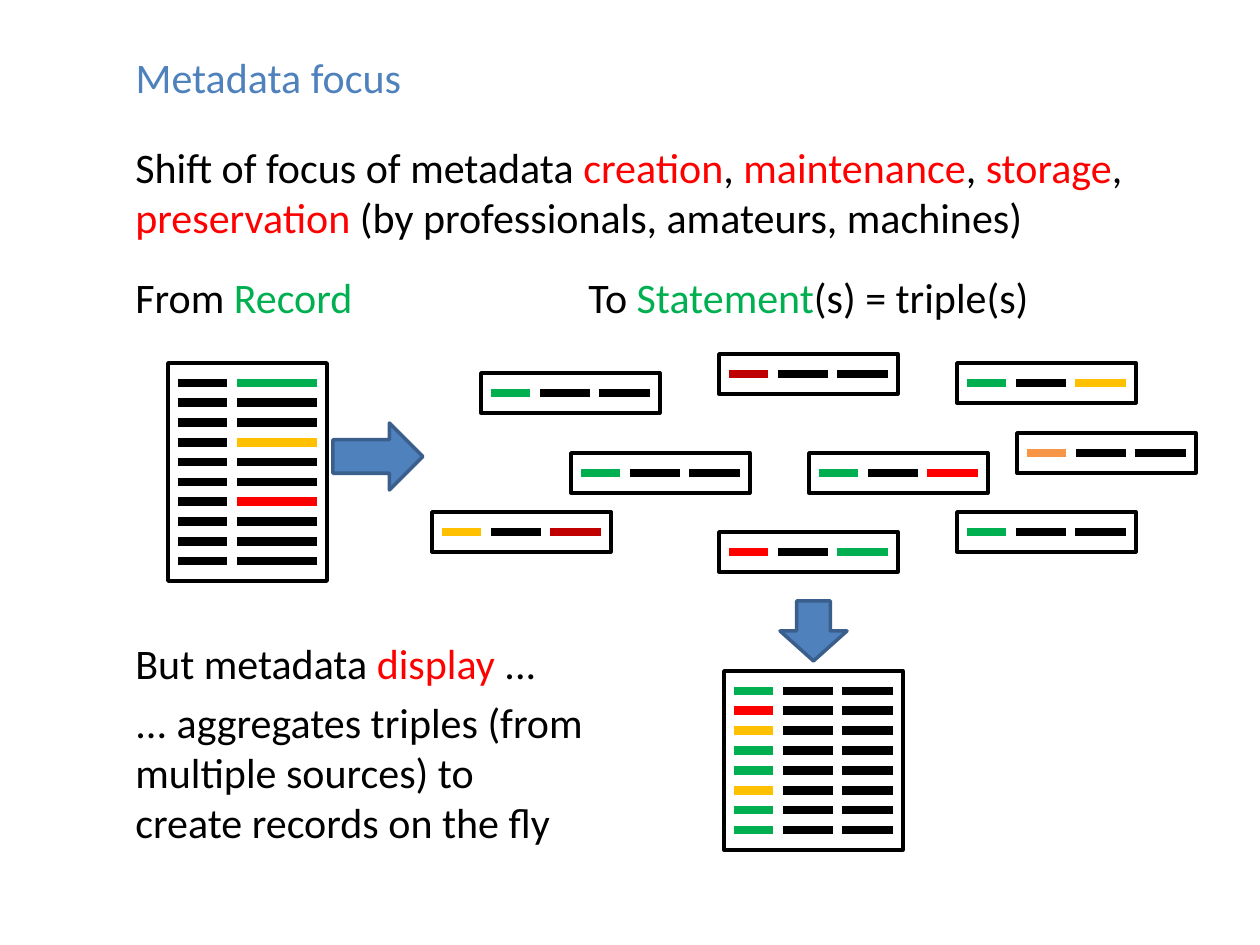
from pptx import Presentation
from pptx import util as u
from pptx.dml.color import RGBColor
from pptx.enum import shapes, text
from pptx.oxml.xmlchemy import OxmlElement

SCALE = 914400 / 126
BLACK = RGBColor(0x00, 0x00, 0x00)
BLUE = RGBColor(0x4F, 0x81, 0xBD)
NAVY = RGBColor(0x3A, 0x5F, 0x8C)
RED = RGBColor(0xFF, 0x00, 0x00)
GREEN = RGBColor(0x00, 0xB0, 0x50)
GOLD = RGBColor(0xFF, 0xC0, 0x00)
MAROON = RGBColor(0xC0, 0x00, 0x00)
ORANGE = RGBColor(0xF7, 0x96, 0x46)

ROW_MARGIN = 20
RECORD_COLUMNS = [(10, 59), (69, 149)]
TRIPLE_COLUMNS = [(10, 49), (59, 109), (118, 169)]

PASSAGES = [
    ((123, 135, 1022, 115), [
        ("Shift of focus of metadata ", BLACK), ("creation", RED),
        (", ", BLACK), ("maintenance", RED), (", ", BLACK),
        ("storage", RED), (", ", BLACK), ("preservation ", RED),
        ("(by professionals, amateurs, machines)", BLACK)]),
    ((123, 265, 248, 63), [("From ", BLACK), ("Record", GREEN)]),
    ((576, 265, 476, 63), [
        ("To ", BLACK), ("Statement", GREEN), ("(s) = triple(s)", BLACK)]),
    ((123, 631, 436, 63), [
        ("But metadata ", BLACK), ("display", RED), (" ...", BLACK)]),
    ((123, 690, 477, 165), [
        ("... aggregates triples (from multiple sources) to "
         "create records on the fly", BLACK)]),
]

STATEMENTS = [
    (481, 373, GREEN, BLACK),
    (809, 453, GREEN, RED),
    (719, 354, MAROON, BLACK),
    (957, 363, GREEN, GOLD),
    (571, 453, GREEN, BLACK),
    (432, 512, GOLD, MAROON),
    (719, 532, RED, GREEN),
    (957, 512, GREEN, BLACK),
    (1017, 433, ORANGE, BLACK),
]


def px(count):
    return u.Emu(round(count * SCALE))


def place(box):
    return [px(length) for length in box]


def write(holder, runs):
    frame = holder.text_frame
    frame.word_wrap = True
    frame.auto_size = text.MSO_AUTO_SIZE.SHAPE_TO_FIT_TEXT
    frame.vertical_anchor = text.MSO_ANCHOR.TOP
    paragraph = frame.paragraphs[0]
    paragraph.alignment = text.PP_ALIGN.LEFT
    for words, color in runs:
        run = paragraph.add_run()
        run.text = words
        run.font.name = "Calibri"
        run.font.size = u.Pt(24)
        run.font.color.rgb = color


def add_title(slide, box, words):
    title = slide.shapes.title
    title.left, title.top, title.width, title.height = place(box)
    write(title, [(words, BLUE)])


def add_passage(slide, box, runs):
    write(slide.shapes.add_textbox(*place(box)), runs)


def add_dash(card, start, end, y, color):
    dash = card.shapes.add_connector(
        shapes.MSO_CONNECTOR.STRAIGHT, px(start), px(y), px(end), px(y))
    dash.line.color.rgb = color
    dash.line.width = u.Pt(5)
    dash._element.spPr.append(OxmlElement("a:effectLst"))


def add_card(slide, box, columns, rows):
    left, top, width, height = box
    card = slide.shapes.add_group_shape()
    frame = card.shapes.add_shape(shapes.MSO_SHAPE.RECTANGLE, *place(box))
    frame.shadow.inherit = False
    frame.fill.background()
    frame.line.color.rgb = BLACK
    frame.line.width = u.Pt(2)
    pitch = (height - 2 * ROW_MARGIN) / max(len(rows) - 1, 1)
    for index, colors in enumerate(rows):
        y = top + ROW_MARGIN + index * pitch
        for (start, end), color in zip(columns, colors):
            add_dash(card, left + start, left + end, y, color)


def add_arrow(slide, direction, box):
    arrow = slide.shapes.add_shape(direction, *place(box))
    arrow.shadow.inherit = False
    arrow.fill.solid()
    arrow.fill.fore_color.rgb = BLUE
    arrow.line.color.rgb = NAVY
    arrow.line.width = u.Pt(2)


def main():
    deck = Presentation()
    deck.slide_width, deck.slide_height = px(1260), px(945)
    slide = deck.slides.add_slide(deck.slide_layouts[5])

    add_title(slide, (123, 45, 308, 63), "Metadata focus")
    for box, runs in PASSAGES:
        add_passage(slide, box, runs)

    values = [GREEN, BLACK, BLACK, GOLD, BLACK,
              BLACK, RED, BLACK, BLACK, BLACK]
    add_card(slide, (168, 363, 159, 218), RECORD_COLUMNS,
             [(BLACK, value) for value in values])

    subjects = [GREEN, RED, GOLD, GREEN, GREEN, GOLD, GREEN, GREEN]
    add_card(slide, (724, 671, 179, 179), TRIPLE_COLUMNS,
             [(subject, BLACK, BLACK) for subject in subjects])

    for left, top, subject, target in STATEMENTS:
        add_card(slide, (left, top, 179, 2 * ROW_MARGIN), TRIPLE_COLUMNS,
                 [(subject, BLACK, target)])

    add_arrow(slide, shapes.MSO_SHAPE.RIGHT_ARROW, (333, 423, 90, 67))
    add_arrow(slide, shapes.MSO_SHAPE.DOWN_ARROW, (780, 601, 67, 60))
    deck.save("out.pptx")


if __name__ == "__main__":
    main()
